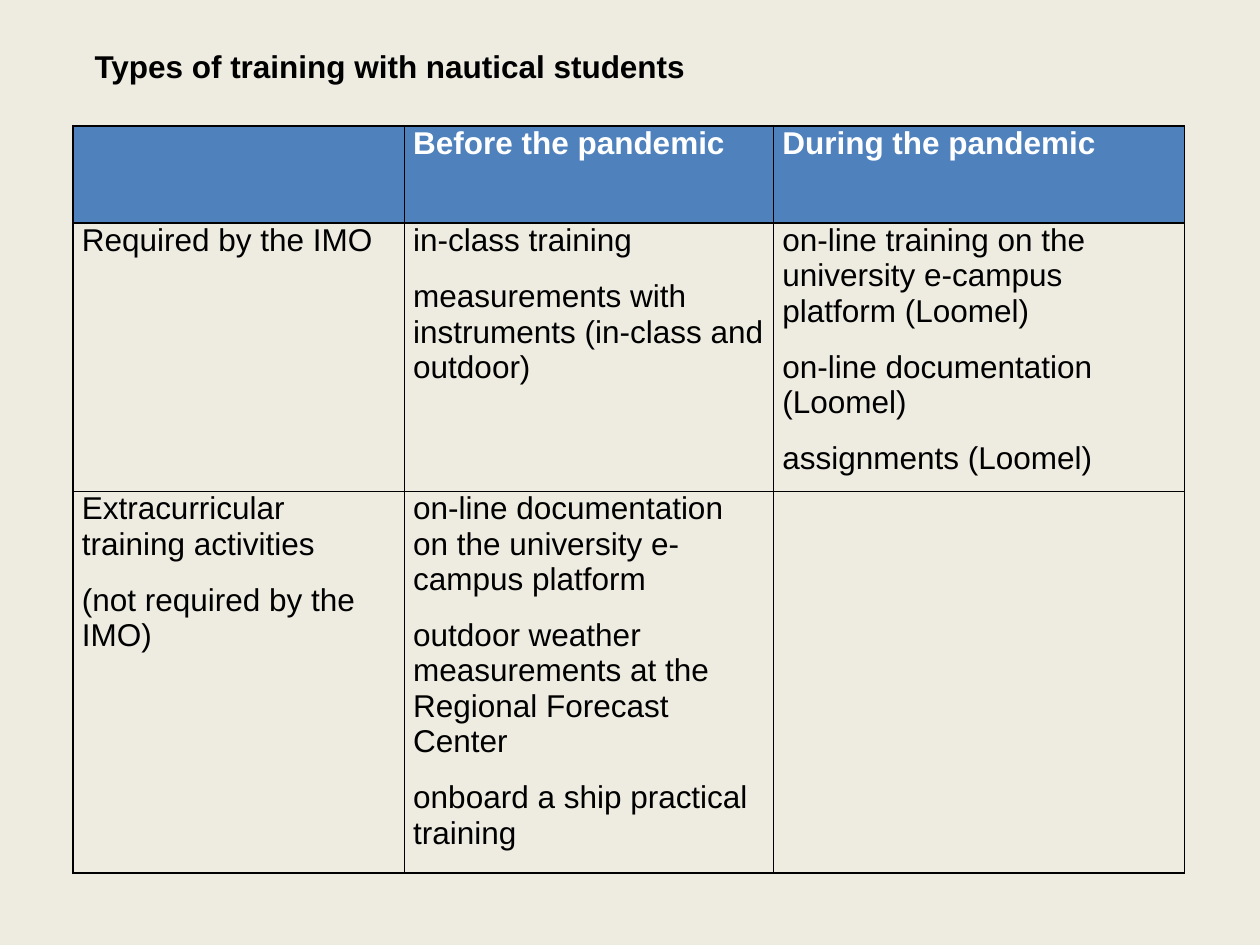
from lxml import etree
from pptx import Presentation
from pptx.dml.color import RGBColor
from pptx.enum.text import MSO_ANCHOR, MSO_AUTO_SIZE, PP_ALIGN
from pptx.oxml.ns import qn
from pptx.util import Inches, Pt

TOP = MSO_ANCHOR.TOP
LEFT = PP_ALIGN.LEFT
NO_FIT = MSO_AUTO_SIZE.NONE
TITLE_ONLY = 5

BLACK, WHITE, BLUE, CREAM = "000000", "FFFFFF", "4F81BD", "EEECE1"
COLUMNS = [2.63, 2.93, 3.26]
ROWS = [0.77, 2.13, 3.03]
MARGIN = 0.58

CONTENT = [
    [[], ["Before the pandemic"], ["During the pandemic"]],
    [
        ["Required by the IMO"],
        ["in-class training",
         "measurements with instruments (in-class and outdoor)"],
        ["on-line training on the university e-campus platform (Loomel)",
         "on-line documentation (Loomel)",
         "assignments (Loomel)"],
    ],
    [
        ["Extracurricular training activities", "(not required by the IMO)"],
        ["on-line documentation on the university e-campus platform",
         "outdoor weather measurements at the Regional Forecast Center",
         "onboard a ship practical training"],
        [],
    ],
]


def add_span(para, text, color, bold):
    span = para.add_run()
    span.text = text
    span.font.name = "Arial"
    span.font.size = Pt(18)
    span.font.bold = bold
    span.font.color.rgb = RGBColor.from_string(color)


def add_borders(cell):
    properties = cell._tc.get_or_add_tcPr()
    for side in ("lnL", "lnR", "lnT", "lnB"):
        line = etree.SubElement(properties, qn(f"a:{side}"), w=str(Pt(1)))
        fill = etree.SubElement(line, qn("a:solidFill"))
        etree.SubElement(fill, qn("a:srgbClr"), val=BLACK)


deck = Presentation()
deck.slide_width, deck.slide_height = Inches(10), Inches(7.5)
page = deck.slides.add_slide(deck.slide_layouts[TITLE_ONLY])
page.background.fill.solid()
page.background.fill.fore_color.rgb = RGBColor.from_string(CREAM)

# Title
title = page.shapes.title
title.left, title.top = Inches(MARGIN), Inches(0.17)
title.width, title.height = Inches(9), Inches(0.5)
frame = title.text_frame
frame.word_wrap = True
frame.auto_size = NO_FIT
frame.vertical_anchor = TOP
frame.margin_left = Inches(0.17)
para = frame.paragraphs[0]
para.alignment = LEFT
para.line_spacing = 1.5
add_span(para, "Types of training with nautical students", BLACK, True)

# Training table
table = page.shapes.add_table(
    len(ROWS), len(COLUMNS), Inches(MARGIN), Inches(1),
    Inches(sum(COLUMNS)), Inches(sum(ROWS))).table
table.horz_banding = False
for column, width in zip(table.columns, COLUMNS):
    column.width = Inches(width)
for row, height in zip(table.rows, ROWS):
    row.height = Inches(height)

for row_index, row_content in enumerate(CONTENT):
    header = row_index == 0
    for column_index, lines in enumerate(row_content):
        cell = table.cell(row_index, column_index)
        cell.margin_left = cell.margin_right = Inches(0.07)
        cell.margin_top = cell.margin_bottom = 0
        cell.vertical_anchor = TOP
        add_borders(cell)
        if header:
            cell.fill.solid()
            cell.fill.fore_color.rgb = RGBColor.from_string(BLUE)
        else:
            cell.fill.background()
        for line_index, line in enumerate(lines):
            frame = cell.text_frame
            para = frame.add_paragraph() if line_index else frame.paragraphs[0]
            para.space_after = Pt(12)
            add_span(para, line, WHITE if header else BLACK, header)

deck.save("out.pptx")
